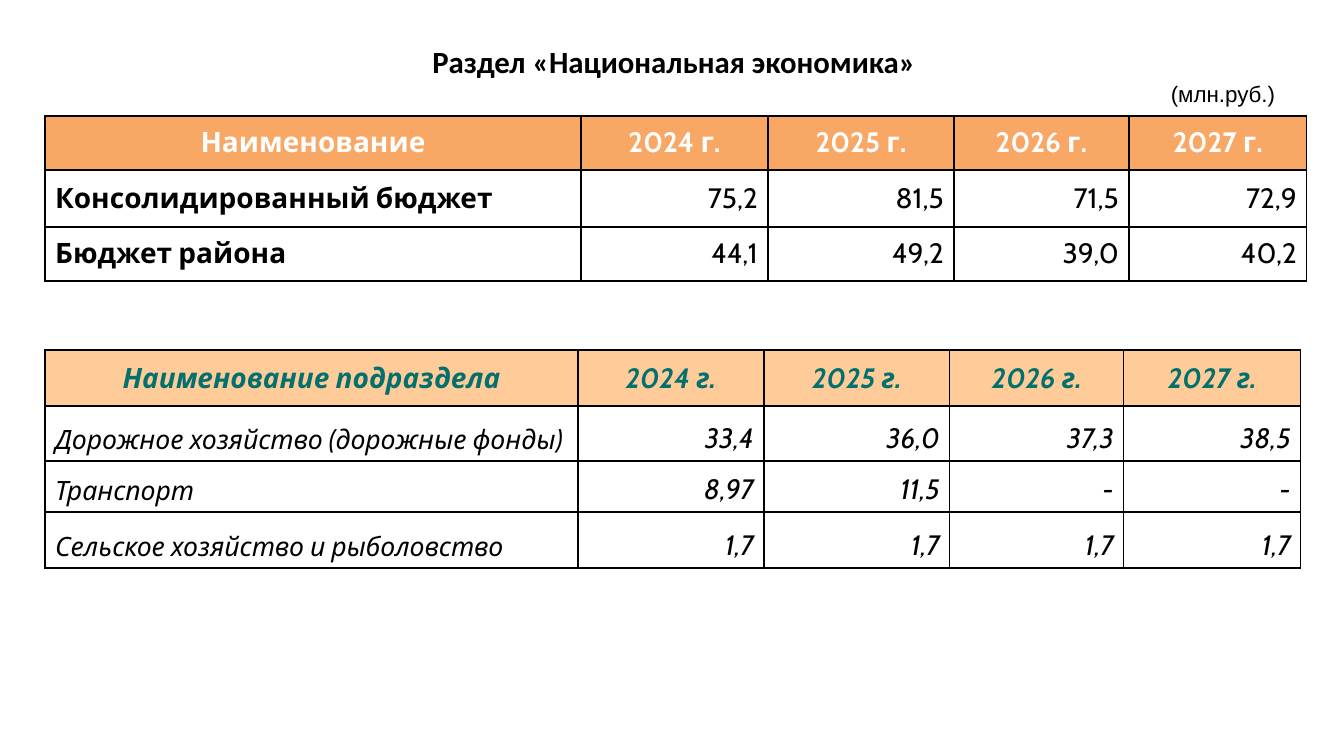
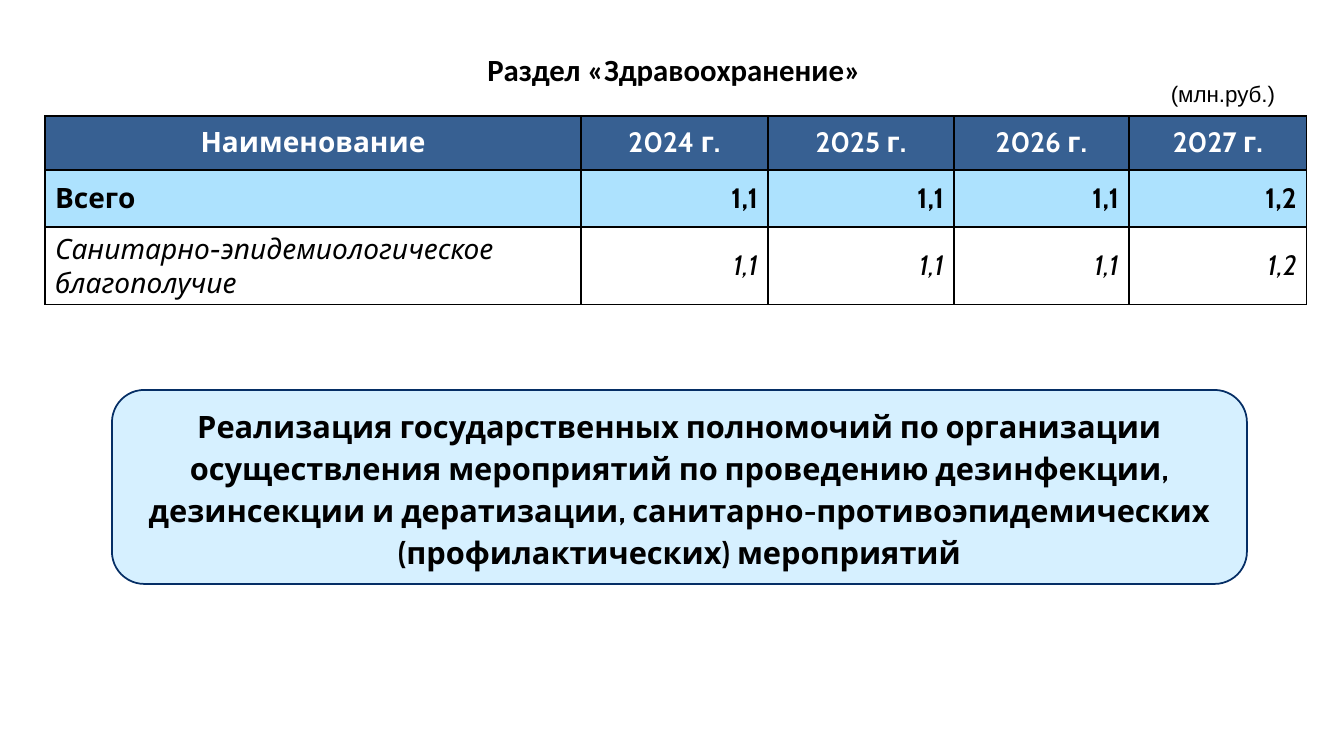
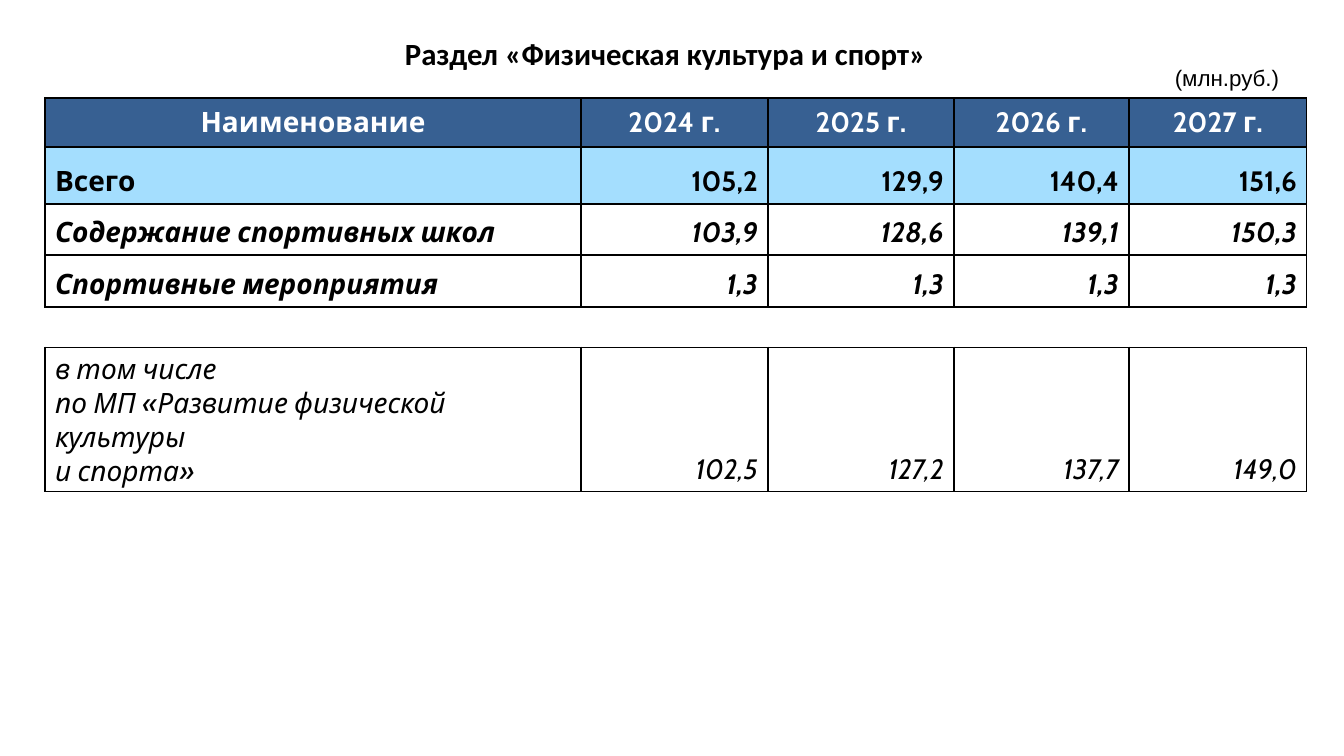
from dataclasses import dataclass

from lxml.etree import SubElement
from pptx import Presentation
from pptx.dml.color import RGBColor
from pptx.enum.shapes import MSO_SHAPE as Shape
from pptx.enum.text import MSO_ANCHOR as Anchor, MSO_AUTO_SIZE as AutoSize, PP_ALIGN as Align
from pptx.oxml.ns import qn
from pptx.util import Emu, Pt

EMU_PER_PX = 914400 / 100.8
TITLE_FONT, UNIT_FONT, BODY_FONT = "Calibri", "Arial", "Cabin"
BLACK, WHITE, TEAL = "000000", "FFFFFF", "03706E"
ORANGE, PEACH = "F8A764", "FFCC99"
NAVY, DARK_BLUE, SKY, CYAN, PALE_BLUE = "376092", "052E65", "ADE2FE", "83D3FE", "D6F0FF"
TABLE_LEFT = 45
WIDE_COLUMNS = (536, 187, 186, 175, 178)
NARROW_COLUMNS = (533, 186, 186, 174, 177)
YEARS = "2024 г.|2025 г.|2026 г.|2027 г."


@dataclass
class Row:
    """One table row: a label, its values divided by bars, and their look."""
    height: int
    label: str = ""
    values: str = ""
    bold: bool = False
    bold_values: bool = False
    italic: bool = False
    label_size: int = 20
    color: str = BLACK
    fill: str = ""
    alpha: int = 100
    anchor: Anchor = Anchor.MIDDLE
    header: bool = False


def px(length):
    """Turn px into EMU."""
    return Emu(round(length * EMU_PER_PX))


def rgb(color):
    """Turn a hex string into a colour."""
    return RGBColor.from_string(color)


def write(para, text, font, size, color=BLACK, bold=False, italic=False, align=Align.CENTER):
    """Add one formatted run to a paragraph."""
    para.alignment = align
    span = para.add_run()
    span.text = text
    span.font.name, span.font.size = font, Pt(size)
    span.font.bold, span.font.italic = bold, italic
    span.font.color.rgb = rgb(color)


def add_page(deck, title, title_box, unit_left, unit_top):
    """Add a page with its section title and unit note."""
    page = deck.slides.add_slide(deck.slide_layouts[5])
    heading = page.shapes.title
    heading.left, heading.top, heading.width, heading.height = map(px, title_box)
    frame = heading.text_frame
    frame.auto_size, frame.vertical_anchor = AutoSize.NONE, Anchor.BOTTOM
    write(frame.paragraphs[0], title, TITLE_FONT, 22, bold=True)
    unit = page.shapes.add_textbox(px(unit_left), px(unit_top), px(184), px(37))
    unit.text_frame.word_wrap = True
    write(unit.text_frame.paragraphs[0], "(млн.руб.)", UNIT_FONT, 16)
    return page


def set_borders(cell, sides):
    """Draw 1 pt black lines on the given sides and none on the others."""
    properties = cell._tc.get_or_add_tcPr()
    for side in "LRTB":
        line = SubElement(properties, qn(f"a:ln{side}"), w=str(Pt(1)))
        if side in sides:
            solid = SubElement(line, qn("a:solidFill"))
            SubElement(solid, qn("a:srgbClr"), val=BLACK)
        else:
            SubElement(line, qn("a:noFill"))


def set_fill(cell, color, alpha):
    """Fill a cell, or leave it clear when no colour is given."""
    if not color:
        cell.fill.background()
        return
    cell.fill.solid()
    cell.fill.fore_color.rgb = rgb(color)
    if alpha < 100:
        tone = cell._tc.tcPr.find(f".//{qn('a:solidFill')}[last()]/{qn('a:srgbClr')}")
        for solid in cell._tc.tcPr.findall(qn("a:solidFill")):
            tone = solid.find(qn("a:srgbClr"))
        SubElement(tone, qn("a:alpha"), val=str(alpha * 1000))


def fill_row(cells, row):
    """Style the cells of one row and write its label and values."""
    texts = [row.label, *row.values.split("|")] if row.label else []
    for cell in cells:
        set_borders(cell, "LRTB" if texts else "TB")
        set_fill(cell, row.fill, row.alpha)
        cell.vertical_anchor = row.anchor
    for index, (cell, text) in enumerate(zip(cells, texts)):
        align = Align.CENTER if row.header else Align.RIGHT if index else Align.LEFT
        size = 20 if index else row.label_size
        bold = row.bold_values if index else row.bold
        for number, line in enumerate(text.split("\n")):
            frame = cell.text_frame
            para = frame.add_paragraph() if number else frame.paragraphs[0]
            write(para, line, BODY_FONT, size, row.color, bold, row.italic, align)


def add_budget_table(page, top, columns, rows):
    """Add a bordered table built from row records."""
    height = sum(row.height for row in rows)
    frame = page.shapes.add_table(len(rows), len(columns), px(TABLE_LEFT), px(top),
                                  px(sum(columns)), px(height))
    table = frame.table
    table.first_row = table.horz_banding = False
    for column, width in zip(table.columns, columns):
        column.width = px(width)
    for line, row in zip(table.rows, rows):
        line.height = px(row.height)
        fill_row(list(line.cells), row)


def header_row(height, fill, label="Наименование", color=WHITE, italic=False):
    """Make the heading row with the years."""
    return Row(height, label, YEARS, bold=True, bold_values=True, italic=italic,
               color=color, fill=fill, header=True)


def add_note(page, text):
    """Add the rounded box with an explanation."""
    box = page.shapes.add_shape(Shape.ROUNDED_RECTANGLE, px(112), px(390), px(1135), px(194))
    box.shadow.inherit = False
    box.fill.solid()
    box.fill.fore_color.rgb = rgb(PALE_BLUE)
    box.line.color.rgb, box.line.width = rgb(DARK_BLUE), Pt(1.25)
    frame = box.text_frame
    frame.word_wrap, frame.vertical_anchor = True, Anchor.MIDDLE
    frame.paragraphs[0].line_spacing = 1.14
    write(frame.paragraphs[0], text, BODY_FONT, 22, bold=True)


def add_economy(deck):
    """Build the national economy page."""
    page = add_page(deck, "Раздел «Национальная экономика»", (327, 28, 694, 57), 1131, 75)
    add_budget_table(page, 350, NARROW_COLUMNS, [
        header_row(56, PEACH, "Наименование подраздела", TEAL, True),
        *(Row(height, label, values, italic=True, label_size=19, anchor=Anchor.BOTTOM)
          for height, label, values in (
              (55, "Дорожное хозяйство (дорожные фонды)", "33,4|36,0|37,3|38,5"),
              (51, "Транспорт", "8,97|11,5|-|-"),
              (56, "Сельское хозяйство и рыболовство", "1,7|1,7|1,7|1,7"))),
    ])
    add_budget_table(page, 116, WIDE_COLUMNS, [
        header_row(54, ORANGE),
        Row(57, "Консолидированный бюджет", "75,2|81,5|71,5|72,9", bold=True),
        Row(54, "Бюджет района", "44,1|49,2|39,0|40,2", bold=True),
    ])


def add_health(deck):
    """Build the health care page."""
    page = add_page(deck, "Раздел «Здравоохранение»", (327, 36, 694, 57), 1131, 75)
    add_budget_table(page, 116, WIDE_COLUMNS, [
        header_row(54, NAVY),
        Row(57, "Всего", "1,1|1,1|1,1|1,2", bold=True, bold_values=True, fill=SKY),
        Row(77, "Санитарно-эпидемиологическое благополучие", "1,1|1,1|1,1|1,2", italic=True),
    ])
    add_note(page, "Реализация государственных полномочий по организации осуществления "
                   "мероприятий по проведению дезинфекции, дезинсекции и дератизации, "
                   "санитарно-противоэпидемических (профилактических) мероприятий")


def add_sport(deck):
    """Build the sport page."""
    page = add_page(deck, "Раздел «Физическая культура и спорт»", (132, 20, 1067, 57), 1135, 59)
    strong = {"bold": True, "bold_values": True, "anchor": Anchor.BOTTOM}
    add_budget_table(page, 98, WIDE_COLUMNS, [
        header_row(49, NAVY),
        Row(57, "Всего", "105,2|129,9|140,4|151,6", fill=CYAN, alpha=73, **strong),
        Row(51, "Содержание спортивных школ", "103,9|128,6|139,1|150,3", italic=True, **strong),
        Row(52, "Спортивные мероприятия", "1,3|1,3|1,3|1,3", italic=True, **strong),
        Row(40),
        Row(144, "в том числе\nпо МП «Развитие физической культуры\nи спорта»",
            "102,5|127,2|137,7|149,0", italic=True, anchor=Anchor.BOTTOM),
    ])


def main():
    """Build and save the deck."""
    deck = Presentation()
    deck.slide_width, deck.slide_height = px(1344), px(756)
    for add_section in (add_economy, add_health, add_sport):
        add_section(deck)
    deck.save("out.pptx")


if __name__ == "__main__":
    main()
